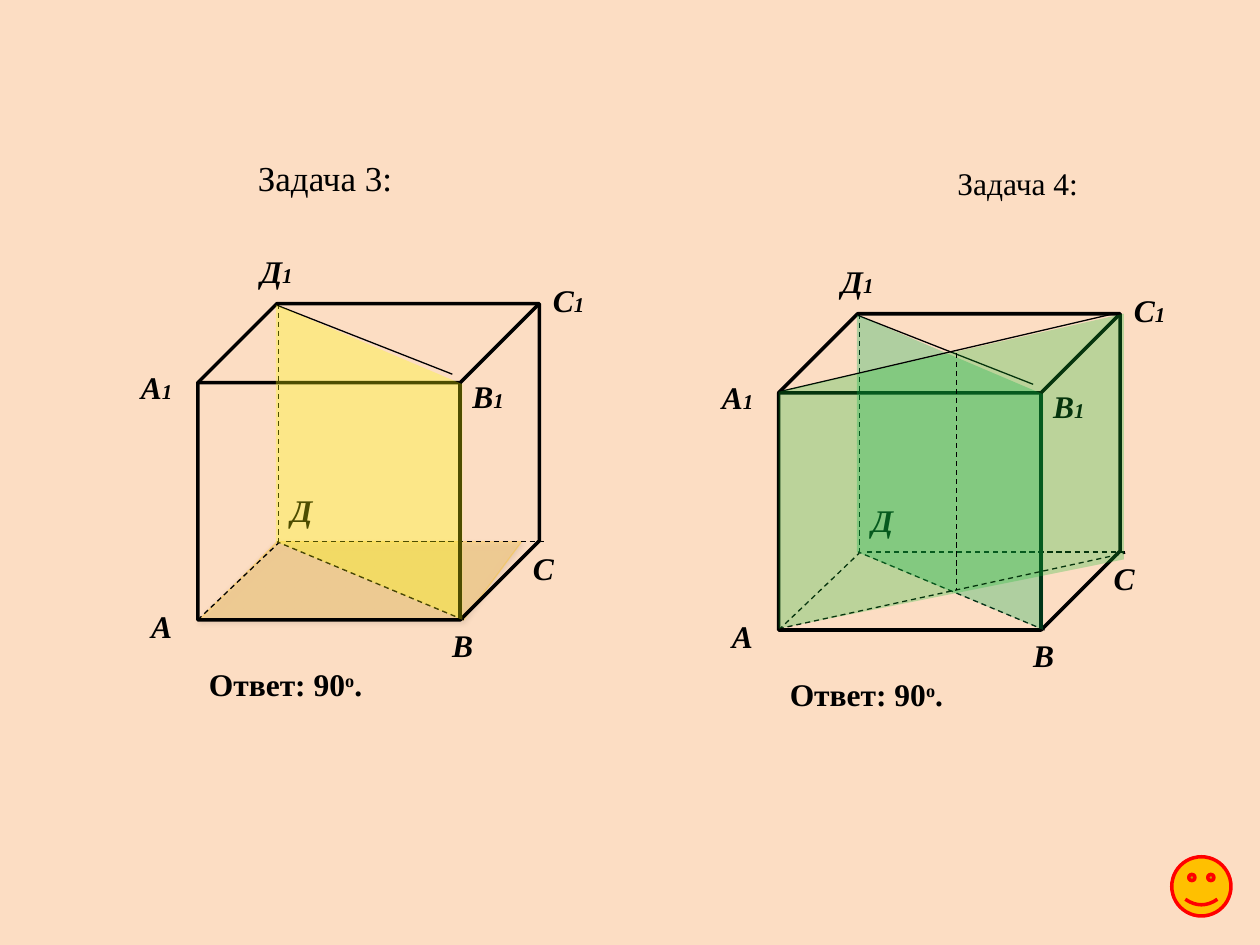
from dataclasses import dataclass

import pptx
import pptx.dml.color
import pptx.enum.dml
import pptx.enum.shapes
import pptx.enum.text
import pptx.oxml
import pptx.oxml.ns
import pptx.util
from pptx.util import Inches

FONT = "Times New Roman"
COLORS = {
    "background": "FCDDC3",
    "black": "000000",
    "base": "FFC000",
    "yellow": "FFFF00",
    "green": "00B050",
    "light green": "14BC30",
    "red": "FF0000",
}
CUBE_SIZE = 2.71, 2.51


@dataclass
class Segment:
    """A line, in inches from the top left corner of its cube."""
    start: tuple[float, float]
    end: tuple[float, float]
    dashed: bool = True


@dataclass
class Plane:
    """A see-through section, in inches from the top left corner of its cube."""
    points: list[tuple[float, float]]
    color: str
    opacity: int


@dataclass
class Label:
    letter: str
    index: str
    left: float
    top: float


@dataclass
class Run:
    text: str
    size: float = 18
    bold: bool = False
    italic: bool = False
    baseline: int = 0


HIDDEN_EDGES = [
    Segment((0.64, 0), (0.64, 1.9)),
    Segment((0, 2.51), (0.64, 1.9)),
    Segment((0.7, 1.89), (2.77, 1.89)),
]
DIAGONALS = [
    Segment((2.11, 2.51), (0.63, 1.89)),
    Segment((0.62, 0.01), (2.02, 0.56), dashed=False),
]
CROSS_DIAGONALS = [
    Segment((0, 0.62), (2.66, 0), dashed=False),
    Segment((0, 2.5), (2.75, 1.9)),
]
AXIS = Segment((1.41, 0.31), (1.41, 2.19))
DIAGONAL_POINTS = [(0.62, 0.01), (2.1, 0.64), (2.1, 2.51), (0.62, 1.89)]
BASE_PLANE = Plane([(0.01, 2.51), (0.63, 1.89), (2.57, 1.89), (2.11, 2.51)], "base", 19)
YELLOW_PLANE = Plane(DIAGONAL_POINTS, "yellow", 30)
GREEN_PLANE = Plane(DIAGONAL_POINTS, "green", 30)
CROSS_PLANE = Plane([(0, 2.5), (0, 0.62), (2.74, 0), (2.74, 1.95)], "light green", 28)
LABELS = [
    Label("А", "", -0.47, 2.36),
    Label("В", "", 1.92, 2.51),
    Label("С", "", 2.56, 1.9),
    Label("Д", "", 0.64, 1.44),
    Label("А", "1", -0.55, 0.46),
    Label("В", "1", 2.08, 0.53),
    Label("С", "1", 2.72, -0.23),
    Label("Д", "1", 0.4, -0.46),
]


def rgb(name: str) -> pptx.dml.color.RGBColor:
    return pptx.dml.color.RGBColor.from_string(COLORS[name])


def set_opacity(fill, percent: int) -> None:
    color = fill._xPr.find(".//" + pptx.oxml.ns.qn("a:srgbClr"))
    color.append(pptx.oxml.parse_xml(
        f'<a:alpha {pptx.oxml.ns.nsdecls("a")} val="{percent * 1000}"/>'))


def set_line(line, color: str, width: float) -> None:
    line.color.rgb = rgb(color)
    line.width = pptx.util.Pt(width)


def add_runs(paragraph, runs: list[Run]) -> None:
    for item in runs:
        run = paragraph.add_run()
        run.text = item.text
        run.font.name = FONT
        run.font.size = pptx.util.Pt(item.size)
        run.font.bold = item.bold
        run.font.italic = item.italic
        run.font.color.rgb = rgb("black")
        if item.baseline:
            run.font._element.set("baseline", str(item.baseline * 1000))


def add_text(slide, left: float, top: float, width: float, height: float,
             runs: list[Run], wrap: bool = False):
    text_frame = slide.shapes.add_textbox(
        Inches(left), Inches(top), Inches(width), Inches(height)).text_frame
    text_frame.word_wrap = wrap
    if not wrap:
        text_frame.auto_size = pptx.enum.text.MSO_AUTO_SIZE.SHAPE_TO_FIT_TEXT
    paragraph = text_frame.paragraphs[0]
    add_runs(paragraph, runs)
    return paragraph


def add_segments(slide, x: float, y: float, segments: list[Segment]) -> None:
    for segment in segments:
        connector = slide.shapes.add_connector(
            pptx.enum.shapes.MSO_CONNECTOR.STRAIGHT,
            Inches(x + segment.start[0]), Inches(y + segment.start[1]),
            Inches(x + segment.end[0]), Inches(y + segment.end[1]))
        set_line(connector.line, "black", 0.75)
        if segment.dashed:
            connector.line.dash_style = pptx.enum.dml.MSO_LINE.DASH
        connector._element.spPr.append(pptx.oxml.parse_xml(
            f'<a:effectLst {pptx.oxml.ns.nsdecls("a")}/>'))


def add_plane(slide, x: float, y: float, plane: Plane):
    points = [(Inches(x + px), Inches(y + py)) for px, py in plane.points]
    builder = slide.shapes.build_freeform(*points[0])
    builder.add_line_segments(points[1:], close=True)
    shape = builder.convert_to_shape()
    shape.shadow.inherit = False
    shape.fill.solid()
    shape.fill.fore_color.rgb = rgb(plane.color)
    set_opacity(shape.fill, plane.opacity)
    shape.line.fill.background()
    return shape


def add_base(slide, x: float, y: float) -> None:
    """Draw the bottom face with its faint outline and soft shadow."""
    shape = add_plane(slide, x, y, BASE_PLANE)
    set_line(shape.line, BASE_PLANE.color, 0.75)
    set_opacity(shape.line.fill, 27)
    effects = shape._element.spPr.find(pptx.oxml.ns.qn("a:effectLst"))
    effects.append(pptx.oxml.parse_xml(
        f'<a:outerShdw {pptx.oxml.ns.nsdecls("a")} blurRad="{pptx.util.Pt(3.1)}" '
        f'dist="{pptx.util.Pt(1.6)}" dir="5400000" rotWithShape="0">'
        f'<a:srgbClr val="{COLORS["black"]}"><a:alpha val="38000"/></a:srgbClr></a:outerShdw>'))


def add_preset(slide, kind, left: float, top: float, width: float, height: float, line: str):
    shape = slide.shapes.add_shape(
        kind, Inches(left), Inches(top), Inches(width), Inches(height))
    shape.shadow.inherit = False
    shape.fill.background()
    set_line(shape.line, line, 2)
    return shape


def add_cube(slide, x: float, y: float) -> None:
    """Draw the cube with its hidden edges, vertex labels and diagonals."""
    add_preset(slide, pptx.enum.shapes.MSO_SHAPE.CUBE, x, y, *CUBE_SIZE, "black")
    add_segments(slide, x, y, HIDDEN_EDGES)
    for label in LABELS:
        runs = [Run(label.letter, bold=True, italic=True)]
        if label.index:
            runs.append(Run(label.index, 12, bold=True, italic=True))
        width = 0.48 if label.index else 0.39
        add_text(slide, x + label.left, y + label.top, width, 0.39, runs)
    add_segments(slide, x, y, DIAGONALS)


def add_answer(slide, x: float, y: float) -> None:
    runs = [Run("Ответ: 90", bold=True), Run("o", bold=True, baseline=30), Run(".", bold=True)]
    paragraph = add_text(slide, x - 0.01, y + 2.82, 2.07, 0.55, runs, wrap=True)
    paragraph.space_before = pptx.util.Pt(3.6)
    properties = paragraph._element.get_or_add_pPr()
    properties.set("marL", str(Inches(0.38)))
    properties.set("indent", str(Inches(-0.38)))


def main() -> None:
    presentation = pptx.Presentation()
    presentation.slide_width, presentation.slide_height = Inches(10), Inches(7.5)
    slide = presentation.slides.add_slide(presentation.slide_layouts[5])
    slide.background.fill.solid()
    slide.background.fill.fore_color.rgb = rgb("background")

    title = slide.shapes.title
    title.left, title.top = Inches(1.72), Inches(1.17)
    title.width, title.height = Inches(1.72), Inches(0.48)
    title.text_frame.vertical_anchor = pptx.enum.text.MSO_ANCHOR.MIDDLE
    add_runs(title.text_frame.paragraphs[0], [Run("Задача 3:", 20)])
    third = 1.57, 2.41
    add_base(slide, *third)
    add_cube(slide, *third)
    add_plane(slide, *third, YELLOW_PLANE)
    add_answer(slide, *third)

    add_text(slide, 7.5, 1.25, 1.17, 0.4, [Run("Задача 4:")])
    fourth = 6.18, 2.49
    add_cube(slide, *fourth)
    add_plane(slide, *fourth, GREEN_PLANE)
    add_segments(slide, *fourth, CROSS_DIAGONALS)
    add_plane(slide, *fourth, CROSS_PLANE)
    add_segments(slide, *fourth, [AXIS])
    add_answer(slide, *fourth)

    smiley = add_preset(slide, pptx.enum.shapes.MSO_SHAPE.SMILEY_FACE, 9.3, 6.8, 0.47, 0.47, "red")
    smiley.fill.solid()
    smiley.fill.fore_color.rgb = rgb("base")
    presentation.save("out.pptx")


if __name__ == "__main__":
    main()
